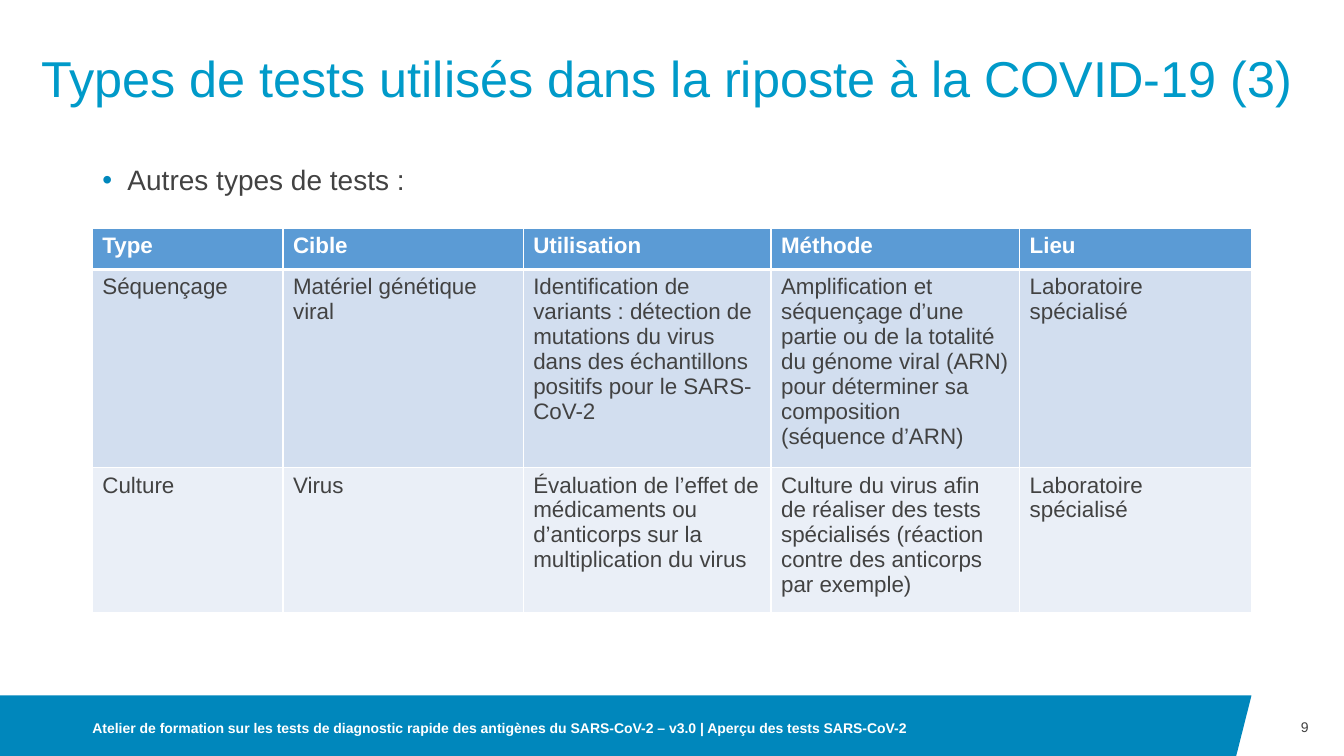
from lxml import etree
from pptx import Presentation
from pptx.dml.color import RGBColor
from pptx.enum.text import MSO_ANCHOR, PP_ALIGN
from pptx.oxml.ns import qn
from pptx.util import Inches, Pt

TOP, MIDDLE, BOTTOM = MSO_ANCHOR.TOP, MSO_ANCHOR.MIDDLE, MSO_ANCHOR.BOTTOM
LEFT, RIGHT = PP_ALIGN.LEFT, PP_ALIGN.RIGHT

WHITE = RGBColor(0xFF, 0xFF, 0xFF)
TITLE_BLUE = RGBColor(0x00, 0x9A, 0xC9)
BAND_BLUE = RGBColor(0x00, 0x87, 0xBC)
TEXT_GREY = RGBColor(0x42, 0x42, 0x42)
ROW_FILLS = [RGBColor(0x5B, 0x9B, 0xD5), RGBColor(0xD2, 0xDE, 0xEF), RGBColor(0xEA, 0xEF, 0xF7)]

# The slide is a grid of 160 columns by 90 rows, twelve units to the inch.
COLUMNS, ROWS = 160, 90
MARGIN = 11
CONTENT_WIDTH = 138
BAND_TOP, BAND_END = 82.8, MARGIN + CONTENT_WIDTH
COLUMN_WIDTHS = [22.7, 28.6, 29.5, 29.6, 27.6]
ROW_HEIGHTS = [4.9, 21.9, 16]

TEST_TYPES = [
    ["Type", "Cible", "Utilisation", "Méthode", "Lieu"],
    [
        "Séquençage",
        "Matériel génétique viral",
        "Identification de variants : détection de mutations du virus dans des "
        "échantillons positifs pour le SARS-CoV-2",
        "Amplification et séquençage d’une partie ou de la totalité du génome viral (ARN) "
        "pour déterminer sa composition (séquence d’ARN)",
        "Laboratoire spécialisé",
    ],
    [
        "Culture",
        "Virus",
        "Évaluation de l’effet de médicaments ou d’anticorps sur la multiplication du virus",
        "Culture du virus afin de réaliser des tests spécialisés "
        "(réaction contre des anticorps par exemple)",
        "Laboratoire spécialisé",
    ],
]


def grid(units):
    """Convert grid units to a length."""
    return Inches(units / 12)


class SlideBuilder:
    font = "Arial"

    def __init__(self, presentation):
        self.slide = presentation.slides.add_slide(presentation.slide_layouts[6])

    def add_text_run(self, paragraph, text, size, color, bold=False):
        run = paragraph.add_run()
        run.text = text
        run.font.name = self.font
        run.font.size = Pt(size)
        run.font.bold = bold
        run.font.color.rgb = color

    def polygon(self, points, color):
        corners = [(grid(x), grid(y)) for x, y in points]
        builder = self.slide.shapes.build_freeform(*corners[0], scale=1.0)
        builder.add_line_segments(corners[1:], close=True)
        shape = builder.convert_to_shape()
        shape.shadow.inherit = False
        shape.fill.solid()
        shape.fill.fore_color.rgb = color
        shape.line.fill.background()

    def text(self, box, text, size, color, bold=False, anchor=TOP, align=LEFT, insets=(0, 0)):
        """Add a one-paragraph text box and return its paragraph."""
        frame = self.slide.shapes.add_textbox(*map(grid, box)).text_frame
        frame.word_wrap = True
        frame.vertical_anchor = anchor
        frame.margin_left = frame.margin_right = Inches(insets[0])
        frame.margin_top = frame.margin_bottom = Inches(insets[1])
        paragraph = frame.paragraphs[0]
        paragraph.alignment = align
        self.add_text_run(paragraph, text, size, color, bold)
        return paragraph

    def bullet(self, paragraph, color):
        properties = paragraph._p.get_or_add_pPr()
        properties.set("marL", str(Inches(0.25)))
        properties.set("indent", str(-Inches(0.25)))
        bullet_color = etree.SubElement(properties, qn("a:buClr"))
        etree.SubElement(bullet_color, qn("a:srgbClr"), val=str(color))
        etree.SubElement(properties, qn("a:buFont"), typeface=self.font)
        etree.SubElement(properties, qn("a:buChar"), char="•")

    def borders(self, cell, color, top, bottom):
        properties = cell._tc.get_or_add_tcPr()
        for side, width in {"L": 1, "R": 1, "T": top, "B": bottom}.items():
            line = etree.SubElement(properties, qn(f"a:ln{side}"), w=str(Pt(width)))
            fill = etree.SubElement(line, qn("a:solidFill"))
            etree.SubElement(fill, qn("a:srgbClr"), val=str(color))

    def table(self, left, top, widths, heights, content, size):
        box = (left, top, sum(widths), sum(heights))
        frame = self.slide.shapes.add_table(len(heights), len(widths), *map(grid, box))
        table = frame.table
        for column, width in zip(table.columns, widths):
            column.width = grid(width)
        for index, (row, height) in enumerate(zip(table.rows, heights)):
            row.height = grid(height)
            header = index == 0
            for cell, text in zip(row.cells, content[index]):
                self.borders(cell, WHITE, top=3 if index == 1 else 1, bottom=3 if header else 1)
                cell.fill.solid()
                cell.fill.fore_color.rgb = ROW_FILLS[index]
                color = WHITE if header else TEXT_GREY
                self.add_text_run(cell.text_frame.paragraphs[0], text, size, color, bold=header)


def main():
    presentation = Presentation()
    presentation.slide_width = grid(COLUMNS)
    presentation.slide_height = grid(ROWS)
    builder = SlideBuilder(presentation)

    band = [(0, BAND_TOP), (BAND_END, BAND_TOP), (BAND_END - 1.9, 90.3), (0, 90.3)]
    builder.polygon(band, BAND_BLUE)

    title = builder.text(
        (4.9, 0.5, 150.7, 12.4),
        "Types de tests utilisés dans la riposte à la COVID-19 (3)",
        36, TITLE_BLUE, anchor=BOTTOM,
    )
    title.line_spacing = 0.9

    builder.text((BAND_END, BAND_TOP, 6.8, 7.5), "9", 10, TEXT_GREY, anchor=MIDDLE, align=RIGHT)

    introduction = builder.text(
        (MARGIN, 18.8, CONTENT_WIDTH, 58.3),
        "Autres types de tests :", 20, TEXT_GREY, insets=(0.1, 0.05),
    )
    builder.bullet(introduction, BAND_BLUE)

    builder.table(MARGIN, 27.2, COLUMN_WIDTHS, ROW_HEIGHTS, TEST_TYPES, 16)

    builder.text(
        (MARGIN, 83.4, 99.4, 6.6),
        "Atelier de formation sur les tests de diagnostic rapide des antigènes du SARS-CoV-2 "
        "– v3.0 | Aperçu des tests SARS-CoV-2",
        10, WHITE, bold=True, anchor=MIDDLE,
    )

    presentation.save("out.pptx")


if __name__ == "__main__":
    main()
